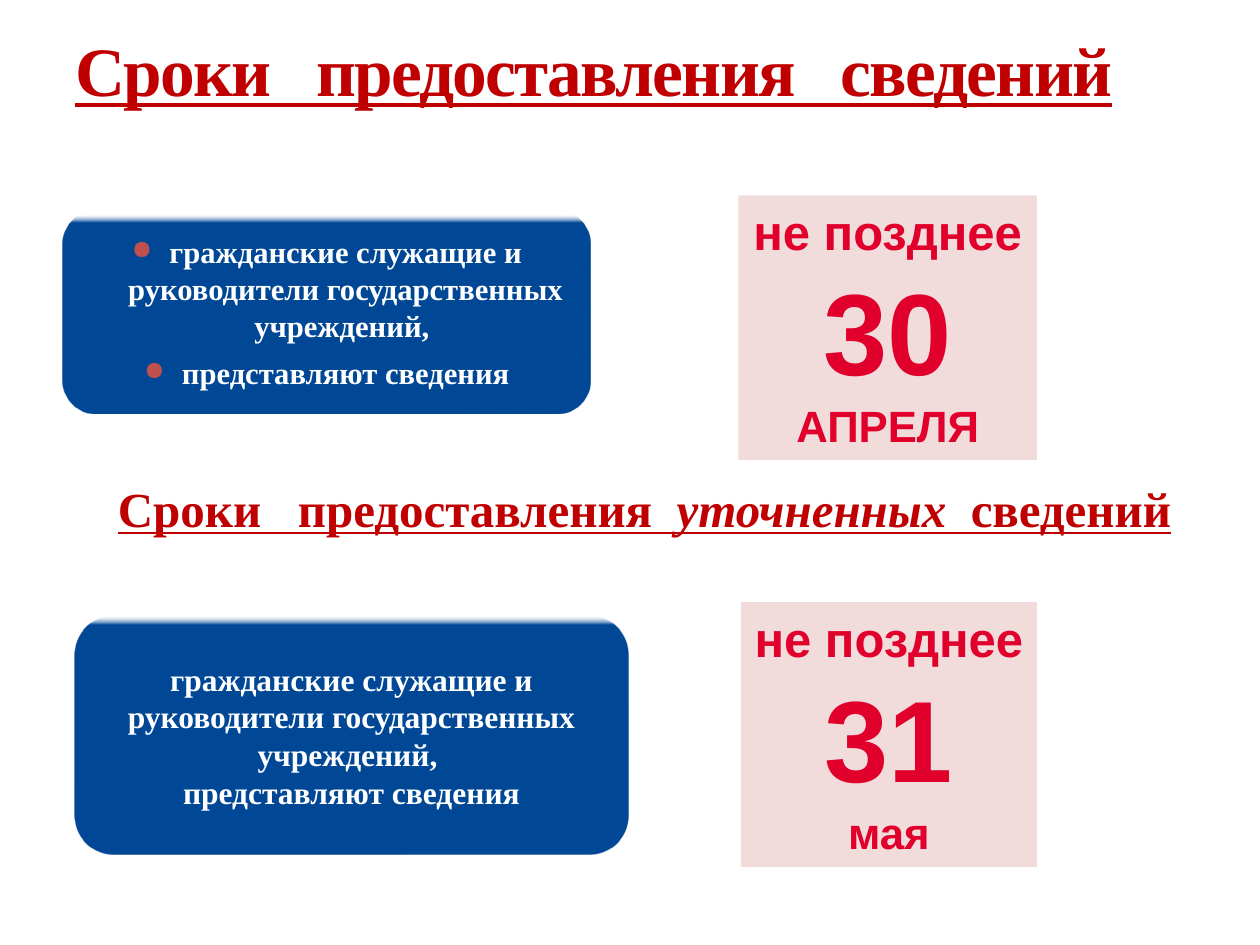
from dataclasses import dataclass

from lxml.etree import SubElement
from pptx import Presentation
from pptx.dml.color import RGBColor as Rgb
from pptx.enum.shapes import MSO_SHAPE as Shape
from pptx.enum.text import MSO_ANCHOR as Anchor, PP_ALIGN as Align
from pptx.oxml.ns import qn
from pptx.util import Inches, Pt


@dataclass(frozen=True)
class Theme:
    heading: str = "C00000"
    date: str = "E1002B"
    card: str = "F2DCDB"
    panel: str = "004896"
    light: str = "FFFFFF"
    bullet: str = "C0504D"
    serif: str = "Times New Roman"
    sans: str = "Arial"
    title_size: float = 39.6
    subtitle_size: float = 28
    date_sizes: tuple = (28, 66, 25)


theme = Theme()
deck = Presentation()
deck.slide_width, deck.slide_height = Inches(10), Inches(7.5)
slide = deck.slides.add_slide(deck.slide_layouts[6])
COL, ROW = deck.slide_width / 100, deck.slide_height / 75


def place(col, row, cols, rows, kind=None):
    """Add a shape, or a text box when no kind is given, on the grid."""
    area = [round(v) for v in (col * COL, row * ROW, cols * COL, rows * ROW)]
    if kind is None:
        return slide.shapes.add_textbox(*area)
    shape = slide.shapes.add_shape(kind, *area)
    shape.shadow.inherit = False
    shape.line.fill.background()
    return shape


def write(shape, lines, sizes, color, font=theme.serif, align=Align.CENTER,
          anchor=Anchor.TOP, underline=False, before=0, bullet=None, tracking=0):
    """Each line is a list of (text, italic) runs and has its own size."""
    frame = shape.text_frame
    frame.word_wrap, frame.vertical_anchor = True, anchor
    for i, (line, size) in enumerate(zip(lines, sizes)):
        para = frame.paragraphs[0] if i == 0 else frame.add_paragraph()
        para.alignment, para.space_before = align, Pt(before)
        if bullet:
            props = para._p.get_or_add_pPr()
            props.set("marL", str(Inches(0.3)))
            props.set("indent", str(Inches(-0.3)))
            SubElement(SubElement(props, qn("a:buClr")), qn("a:srgbClr"), val=bullet)
            SubElement(props, qn("a:buSzPct"), val="85000")
            SubElement(props, qn("a:buChar"), char="●")
        for text, italic in line:
            run = para.add_run()
            run.text = text
            run.font.name, run.font.size = font, Pt(size)
            run.font.bold, run.font.italic = True, italic
            run.font.underline = underline
            run.font.color.rgb = Rgb.from_string(color)
            if tracking:
                run._r.get_or_add_rPr().set("spc", str(tracking))


# Headings
write(place(5, 1.7, 90, 13.3),
      [[("Сроки   предоставления   сведений", False)]], [theme.title_size],
      theme.heading, align=Align.LEFT, underline=True, tracking=-100)
write(place(4.3, 37.5, 93.7, 5.7),
      [[("Сроки   предоставления  ", False), ("уточненных", True),
        ("  сведений", False)]], [theme.subtitle_size],
      theme.heading, underline=True, before=10)

# Who reports (panel) and by which date (card)
who = [[("гражданские служащие и руководители государственных учреждений, ", False)],
       [("представляют сведения", False)]]
deadlines = [
    dict(panel=(5, 16.7, 41.9, 16.1), fade=(0.02, 0.06), size=17.5, before=6,
         bullet=theme.bullet, card=(58.6, 15.5, 23.7, 21), day="30", month="АПРЕЛЯ"),
    dict(panel=(5.9, 48.9, 44, 18.9), fade=(0, 0.04), size=18, before=0,
         bullet=None, card=(58.8, 47.8, 23.5, 21), day="31", month="мая"),
]
for due in deadlines:
    panel = place(*due["panel"], Shape.ROUNDED_RECTANGLE)
    panel.fill.gradient()
    panel.fill.gradient_angle = 270
    stops = panel.fill.gradient_stops
    for stop, position, color in zip(stops, due["fade"], (theme.light, theme.panel)):
        stop.position, stop.color.rgb = position, Rgb.from_string(color)
    # The pale top edge is nearly transparent
    pale = panel.fill._fill._gradFill.find(".//" + qn("a:srgbClr"))
    SubElement(pale, qn("a:alpha"), val="14000")
    write(panel, who, [due["size"]] * 2, theme.light, anchor=Anchor.MIDDLE,
          before=due["before"], bullet=due["bullet"])

    card = place(*due["card"], Shape.RECTANGLE)
    card.fill.solid()
    card.fill.fore_color.rgb = Rgb.from_string(theme.card)
    write(card, [[(text, False)] for text in ("не позднее", due["day"], due["month"])],
          theme.date_sizes, theme.date, font=theme.sans)

deck.save("out.pptx")
